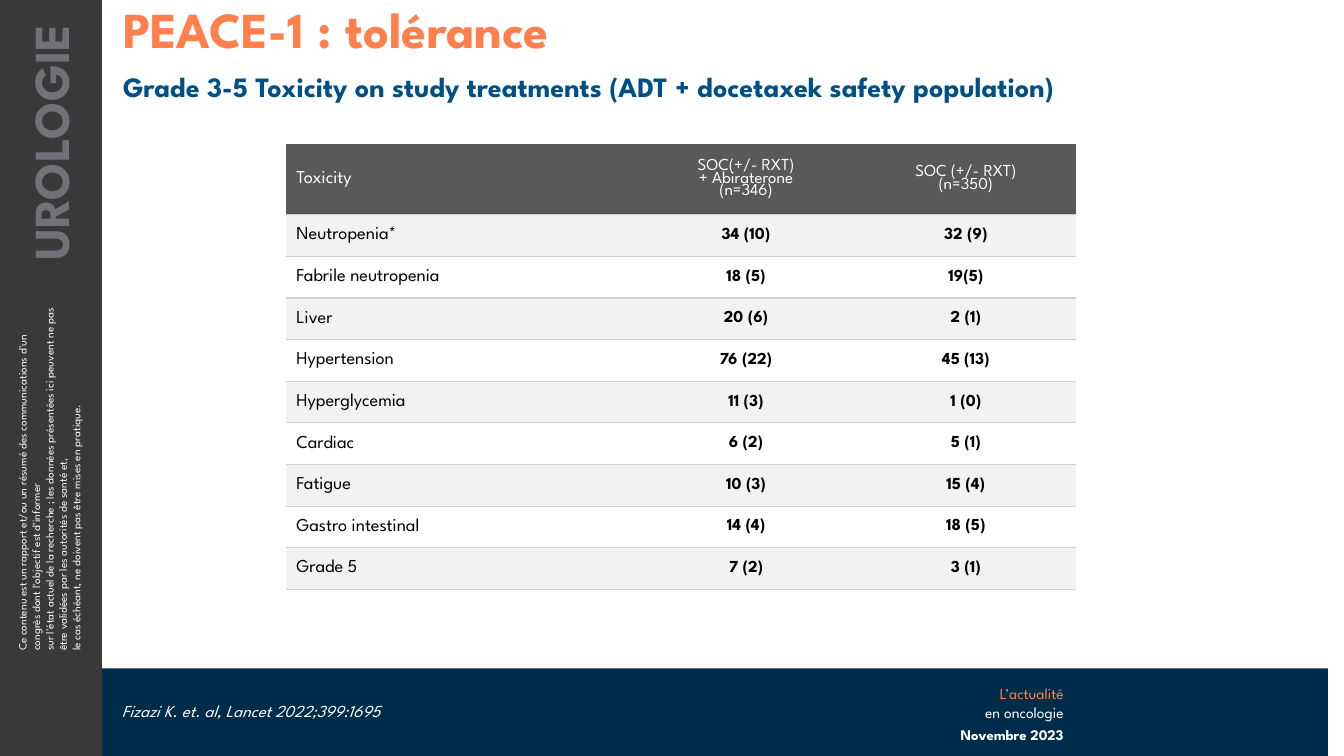
from lxml.etree import SubElement
from pptx import Presentation
from pptx.dml.color import RGBColor
from pptx.enum.shapes import MSO_SHAPE
from pptx.enum.text import MSO_ANCHOR, PP_ALIGN
from pptx.oxml.ns import qn
from pptx.util import Inches, Pt

FONT = "League Spartan"
WHITE, ORANGE, GREY = "FFFFFF", "FF7F4D", "D0CECE"
LEFT, RIGHT, MID = PP_ALIGN.LEFT, PP_ALIGN.RIGHT, PP_ALIGN.CENTER
TOP, MIDDLE = MSO_ANCHOR.TOP, MSO_ANCHOR.MIDDLE
NO_STYLE = "{2D5ABB26-0587-4C30-8999-92F81FD0307C}"


def paint(target, color):
    """Give a fill a solid colour."""
    target.solid()
    target.fore_color.rgb = RGBColor.from_string(color)


def write(para, lines, size, align=LEFT, space=1.0, bold=False, italic=False):
    """Fill a paragraph with (text, colour) runs, one per line."""
    para.alignment = align
    para.line_spacing = space
    for n, (text, color) in enumerate(lines):
        if n:
            para.add_line_break()
        run = para.add_run()
        run.text = text
        font = run.font
        font.name, font.size = FONT, Pt(size)
        font.bold, font.italic = bold, italic
        paint(font.fill, color)


deck = Presentation()
deck.slide_width, deck.slide_height = Inches(13.33), Inches(7.5)
slide = deck.slides.add_slide(deck.slide_layouts[6])

# Footer band, then side band
for box, color in [
    ((0.85, 6.63, 12.32, 0.87), "002C4C"),
    ((0, 0, 1.01, 7.5), "3A3839"),
]:
    band = slide.shapes.add_shape(MSO_SHAPE.RECTANGLE, *map(Inches, box))
    band.shadow.inherit = False
    paint(band.fill, color)
    band.line.fill.background()

# Texts: box, left and right inset, turn, anchor, lines, style
notice = [
    "Ce contenu est un rapport et/ou un résumé des communications d'un congrès dont l'objectif est d'informer",
    "sur l'état actuel de la recherche ; les données présentées ici peuvent ne pas être validées par les autorités de santé et,",
    "le cas échéant, ne doivent pas être mises en pratique.",
]
texts = [
    ((-1.31, 4.37, 3.6, 0.77), 0.1, 0.1, 270, TOP,
     [(line, WHITE) for line in notice], dict(size=8)),
    ((-1.04, 1.18, 3.07, 0.71), 0.1, 0.24, 270, TOP,
     [("UROLOGIE", "737078")], dict(size=36, align=RIGHT, bold=True)),
    ((9.01, 6.74, 1.64, 0.47), 0.1, 0.1, 0, TOP,
     [("L’actualité", ORANGE), ("en oncologie", WHITE)],
     dict(size=11, align=RIGHT)),
    ((9.01, 7.17, 1.54, 0.27), 0.1, 0, 0, TOP,
     [("Novembre 2023", WHITE)],
     dict(size=10.5, align=RIGHT, space=0.9, bold=True)),
    ((1.11, 6.63, 5.64, 0.87), 0.1, 0.1, 0, MIDDLE,
     [("Fizazi K. et. al, Lancet 2022;399:1695", WHITE)],
     dict(size=12, space=0.9, italic=True)),
    ((1.02, 0, 12.31, 0.57), 0.2, 0.1, 0, TOP,
     [("PEACE-1 : tolérance", ORANGE)],
     dict(size=36, space=0.9, bold=True)),
    ((1.02, 0.68, 12.31, 0.37), 0.2, 0.1, 0, TOP,
     [("Grade 3-5 Toxicity on study treatments (ADT + docetaxek safety population)", "005086")],
     dict(size=20, space=0.9, bold=True)),
]
for box, left, right, turn, anchor, lines, style in texts:
    label = slide.shapes.add_textbox(*map(Inches, box))
    label.rotation = turn
    frame = label.text_frame
    frame.word_wrap = True
    frame.vertical_anchor = anchor
    frame.margin_left, frame.margin_right = Inches(left), Inches(right)
    write(frame.paragraphs[0], lines, **style)

# Toxicity table
rows = [
    ("Toxicity", "SOC(+/- RXT)\n+ Abiraterone\n(n=346)", "SOC (+/- RXT)\n(n=350)"),
    ("Neutropenia*", "34 (10)", "32 (9)"),
    ("Fabrile neutropenia", "18 (5)", "19(5)"),
    ("Liver", "20 (6)", "2 (1)"),
    ("Hypertension", "76 (22)", "45 (13)"),
    ("Hyperglycemia", "11 (3)", "1 (0)"),
    ("Cardiac", "6 (2)", "5 (1)"),
    ("Fatigue", "10 (3)", "15 (4)"),
    ("Gastro intestinal", "14 (4)", "18 (5)"),
    ("Grade 5", "7 (2)", "3 (1)"),
]
holder = slide.shapes.add_table(
    len(rows), 3, Inches(2.84), Inches(1.43), Inches(7.82), Inches(4.42))
table = holder.table
holder._element.find(".//" + qn("a:tableStyleId")).text = NO_STYLE
for col, width in zip(table.columns, (3.47, 2.18, 2.18)):
    col.width = Inches(width)

for r, row in enumerate(rows):
    head = r == 0
    table.rows[r].height = Inches(0.7) if head else Inches(3.72 / 9)
    shade = "595959" if head else ("F2F2F2" if r % 2 else WHITE)
    for c, text in enumerate(row):
        cell = table.cell(r, c)
        cell.vertical_anchor = MIDDLE
        edge = SubElement(cell._tc.get_or_add_tcPr(), qn("a:lnB"), w=str(Pt(1)))
        fill = SubElement(edge, qn("a:solidFill"))
        SubElement(fill, qn("a:srgbClr"), val=GREY)
        paint(cell.fill, shade)
        frame = cell.text_frame
        for n, line in enumerate(text.split("\n")):
            para = frame.add_paragraph() if n else frame.paragraphs[0]
            write(para, [(line, WHITE if head else "000000")],
                  size=12 if c else 13, align=MID if c else LEFT,
                  space=0.8 if head and c else 1.0, bold=bool(c) and not head)

deck.save("out.pptx")
